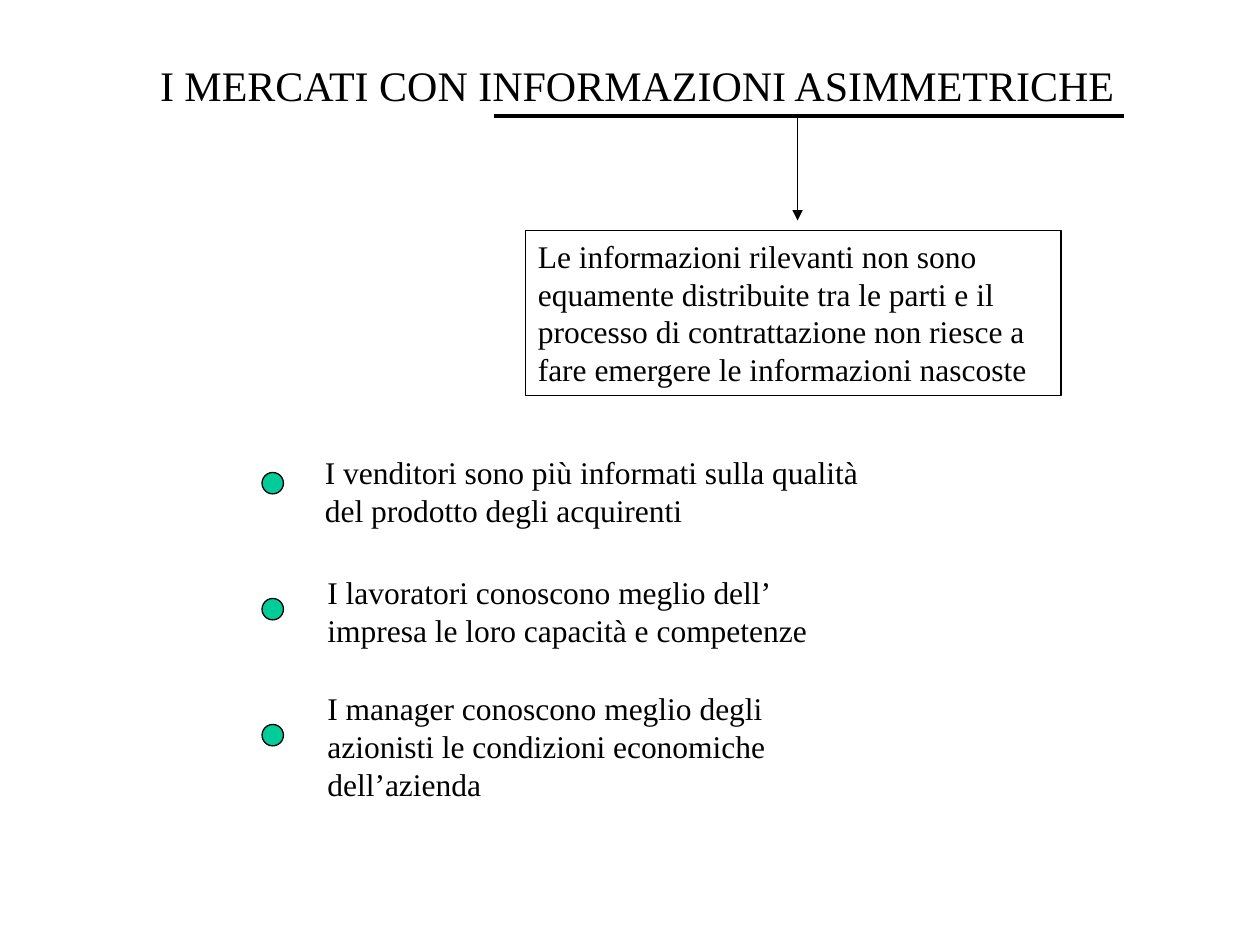
import pptx
import pptx.dml.color
import pptx.enum.shapes
import pptx.enum.text
import pptx.oxml
import pptx.oxml.ns
import pptx.util
from dataclasses import dataclass

Inches = pptx.util.Inches
Pt = pptx.util.Pt
RGB = pptx.dml.color.RGBColor
MSO_SHAPE = pptx.enum.shapes.MSO_SHAPE


@dataclass(frozen=True)
class Theme:
    font: str = "Times New Roman"
    ink: RGB = RGB(0x00, 0x00, 0x00)
    dot: RGB = RGB(0x00, 0xCC, 0x99)
    title: Pt = Pt(24)
    body: Pt = Pt(18)
    thin: Pt = Pt(0.75)
    thick: Pt = Pt(2.25)


THEME = Theme()


def write(sp, text, size, wrap=True):
    tf = sp.text_frame
    tf.text = text
    tf.word_wrap = wrap
    tf.auto_size = pptx.enum.text.MSO_AUTO_SIZE.SHAPE_TO_FIT_TEXT
    tf.vertical_anchor = pptx.enum.text.MSO_ANCHOR.TOP
    p = tf.paragraphs[0]
    p.alignment = pptx.enum.text.PP_ALIGN.LEFT
    p.font.name = THEME.font
    p.font.size = size
    p.font.color.rgb = THEME.ink


def set_title(s, text, left, top, width, height):
    sp = s.shapes.title
    sp.left, sp.top = Inches(left), Inches(top)
    sp.width, sp.height = Inches(width), Inches(height)
    write(sp, text, THEME.title, wrap=False)


def add_text(s, text, left, top, width, height):
    sp = s.shapes.add_textbox(Inches(left), Inches(top), Inches(width), Inches(height))
    write(sp, text, THEME.body)


def add_outlined(s, kind, left, top, width, height, fill=None):
    sp = s.shapes.add_shape(kind, Inches(left), Inches(top), Inches(width), Inches(height))
    sp.shadow.inherit = False
    if fill is None:
        sp.fill.background()
    else:
        sp.fill.solid()
        sp.fill.fore_color.rgb = fill
    sp.line.color.rgb = THEME.ink
    sp.line.width = THEME.thin
    return sp


def add_line(s, x1, y1, x2, y2, width, arrow=False):
    line = s.shapes.add_connector(
        pptx.enum.shapes.MSO_CONNECTOR.STRAIGHT,
        Inches(x1), Inches(y1), Inches(x2), Inches(y2))
    line.line.color.rgb = THEME.ink
    line.line.width = width
    if arrow:
        tail = pptx.oxml.parse_xml(
            f'<a:tailEnd {pptx.oxml.ns.nsdecls("a")} type="triangle"/>')
        line.line._get_or_add_ln().append(tail)
    line._element.spPr.append(
        pptx.oxml.parse_xml(f'<a:effectLst {pptx.oxml.ns.nsdecls("a")}/>'))


def main():
    prs = pptx.Presentation()
    prs.slide_width, prs.slide_height = Inches(10), Inches(7.5)
    s = prs.slides.add_slide(prs.slide_layouts[5])

    set_title(s, "I MERCATI CON INFORMAZIONI ASIMMETRICHE", 1.17, 0.42, 7.84, 0.5)
    add_line(s, 3.92, 0.92, 8.92, 0.92, THEME.thick)
    add_line(s, 6.33, 0.92, 6.33, 1.75, THEME.thin, arrow=True)

    definition = add_outlined(s, MSO_SHAPE.RECTANGLE, 4.17, 1.83, 4.25, 1.31)
    write(definition,
          "Le informazioni rilevanti non sono equamente distribuite tra le parti e il "
          "processo di contrattazione non riesce a fare emergere le informazioni nascoste",
          THEME.body)

    examples = [
        (2.48, 3.55, 0.7, "I venditori sono più informati sulla qualità del prodotto degli acquirenti"),
        (2.5, 4.5, 0.7, "I lavoratori conoscono meglio dell’ impresa le loro capacità e competenze"),
        (2.5, 5.42, 1, "I manager conoscono meglio degli azionisti le condizioni economiche dell’azienda"),
    ]
    for i, (left, top, height, text) in enumerate(examples):
        add_outlined(s, MSO_SHAPE.OVAL, 2.08, 3.75 + i, 0.17, 0.17, THEME.dot)
        add_text(s, text, left, top, 4.52, height)

    prs.save("out.pptx")


if __name__ == "__main__":
    main()
